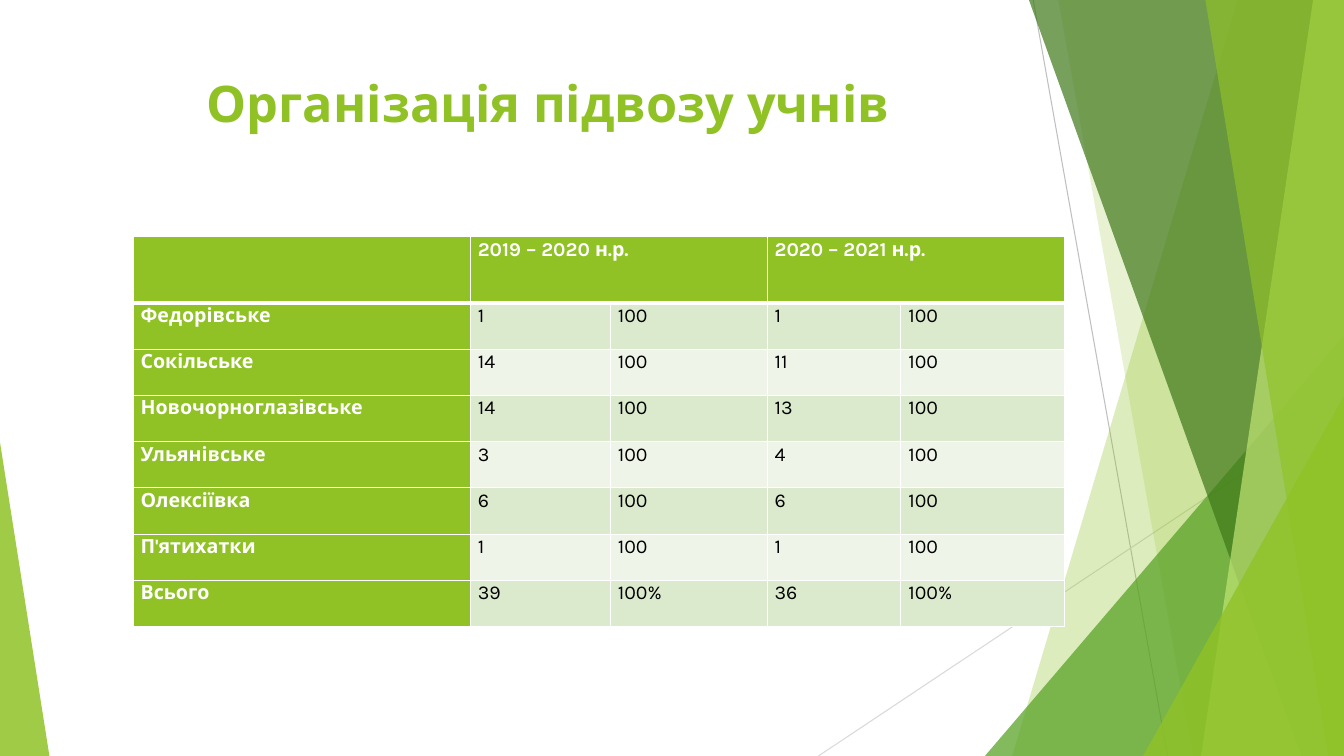
"""Build a slide with a table of pupil transport by village and school year."""
from lxml import etree
from pptx import Presentation
from pptx.dml.color import RGBColor
from pptx.enum.shapes import MSO_CONNECTOR, MSO_SHAPE
from pptx.enum.text import MSO_ANCHOR, PP_ALIGN
from pptx.oxml.ns import qn
from pptx.util import Pt

STRAIGHT = MSO_CONNECTOR.STRAIGHT
TRIANGLE = MSO_SHAPE.ISOSCELES_TRIANGLE
TOP = MSO_ANCHOR.TOP
CENTER = PP_ALIGN.CENTER

WHITE = RGBColor(0xFF, 0xFF, 0xFF)
BLACK = RGBColor(0, 0, 0)
LIME = RGBColor(0x90, 0xC2, 0x26)
PALE_LIME = RGBColor(0xC0, 0xE4, 0x74)
GREEN = RGBColor(0x54, 0xA0, 0x21)
DARK_GREEN = RGBColor(0x3F, 0x78, 0x19)
ODD_ROW = RGBColor(0xDB, 0xE9, 0xCD)
EVEN_ROW = RGBColor(0xEE, 0xF4, 0xE8)
GRAY = RGBColor(0xBF, 0xBF, 0xBF)
LIGHT_GRAY = RGBColor(0xD9, 0xD9, 0xD9)

FONT = "Karla"
WIDTH, HEIGHT = 960, 540
TITLE = "Організація підвозу учнів"
ROWS = [
    ("", "2019 – 2020 н.р.", "", "2020 – 2021 н.р.", ""),
    ("Федорівське", "1", "100", "1", "100"),
    ("Сокільське", "14", "100", "11", "100"),
    ("Новочорноглазівське", "14", "100", "13", "100"),
    ("Ульянівське", "3", "100", "4", "100"),
    ("Олексіївка", "6", "100", "6", "100"),
    ("П'ятихатки", "1", "100", "1", "100"),
    ("Всього", "39", "100%", "36", "100%"),
]
COLUMN_WIDTHS = (241, 100, 112, 95.5, 117)
HEADER_HEIGHT, ROW_HEIGHT = 47.2, 33.05
TABLE_LEFT, TABLE_TOP = 95, 169.2

LINES = [
    ((738, 0), (834, HEIGHT), GRAY),
    ((WIDTH, 290), (584.6, HEIGHT), LIGHT_GRAY),
]
# Each band runs from its slanted left edge to the right side of the slide.
BANDS_BACK = [(884, 723, LIME, 30), (756, 852, LIME, 20)]
BANDS_FRONT = [
    (735, 929.5, DARK_GREEN, 70),
    (938, 858, PALE_LIME, 70),
    (861, 949, LIME, 65),
]
CORNER_BACK = (703.5, 240, WIDTH, 1, GREEN, 72)
CORNERS_FRONT = [(816.5, 283, WIDTH, 1, LIME, 80), (0, 316, 35.3, 0, LIME, 85)]


def paint(shape, color, opacity):
    shape.shadow.inherit = False
    shape.line.fill.background()
    shape.fill.solid()
    shape.fill.fore_color.rgb = color
    color_element = shape._element.spPr.find(".//" + qn("a:srgbClr"))
    etree.SubElement(color_element, qn("a:alpha"), val=str(opacity * 1000))


def add_line(slide, start, end, color):
    points = [Pt(value) for value in start + end]
    connector = slide.shapes.add_connector(STRAIGHT, *points)
    connector.line.color.rgb = color
    connector.line.width = Pt(0.75)
    etree.SubElement(connector._element.spPr, qn("a:effectLst"))


def add_band(slide, top_x, bottom_x, color, opacity):
    builder = slide.shapes.build_freeform(Pt(top_x), 0)
    corners = [(WIDTH, 0), (WIDTH, HEIGHT), (bottom_x, HEIGHT)]
    builder.add_line_segments([(Pt(x), Pt(y)) for x, y in corners], close=True)
    paint(builder.convert_to_shape(), color, opacity)


def add_corner(slide, left, top, right, apex, color, opacity):
    shape = slide.shapes.add_shape(
        TRIANGLE, Pt(left), Pt(top), Pt(right - left), Pt(HEIGHT - top))
    shape.adjustments[0] = apex
    paint(shape, color, opacity)


def add_title(slide):
    box = slide.shapes.add_textbox(Pt(53.3), Pt(48), Pt(677), Pt(104))
    frame = box.text_frame
    frame.word_wrap = True
    frame.vertical_anchor = TOP
    paragraph = frame.paragraphs[0]
    paragraph.text = TITLE
    paragraph.alignment = CENTER
    set_font(paragraph.font, 36, LIME, True)


def set_font(font, size, color, bold):
    font.name = FONT
    font.size = Pt(size)
    font.color.rgb = color
    font.bold = bold


def set_borders(cell, top, bottom):
    properties = cell._tc.get_or_add_tcPr()
    widths = {"a:lnL": 1, "a:lnR": 1, "a:lnT": top, "a:lnB": bottom}
    for index, (tag, width) in enumerate(widths.items()):
        line = etree.Element(qn(tag), w=str(Pt(width)))
        fill = etree.SubElement(line, qn("a:solidFill"))
        etree.SubElement(fill, qn("a:srgbClr"), val=str(WHITE))
        properties.insert(index, line)


def fill_cell(cell, text, row, column):
    heading = row == 0 or column == 0
    cell.margin_left = cell.margin_right = Pt(5.4)
    cell.margin_top = cell.margin_bottom = 0
    cell.fill.solid()
    cell.fill.fore_color.rgb = LIME if heading else ODD_ROW if row % 2 else EVEN_ROW
    set_borders(cell, 3 if row == 1 else 1, 3 if row == 0 else 1)
    paragraph = cell.text_frame.paragraphs[0]
    paragraph.text = text
    paragraph.line_spacing = 1.07
    set_font(paragraph.font, 14, WHITE if heading else BLACK, heading)


def add_transport_table(slide):
    heights = [HEADER_HEIGHT] + [ROW_HEIGHT] * (len(ROWS) - 1)
    table = slide.shapes.add_table(
        len(ROWS), len(COLUMN_WIDTHS), Pt(TABLE_LEFT), Pt(TABLE_TOP),
        Pt(sum(COLUMN_WIDTHS)), Pt(sum(heights))).table
    for column, width in zip(table.columns, COLUMN_WIDTHS):
        column.width = Pt(width)
    for row, height in zip(table.rows, heights):
        row.height = Pt(height)
    for row, texts in enumerate(ROWS):
        for column, text in enumerate(texts):
            fill_cell(table.cell(row, column), text, row, column)
    for column in (1, 3):
        table.cell(0, column).merge(table.cell(0, column + 1))


def main():
    presentation = Presentation()
    presentation.slide_width, presentation.slide_height = Pt(WIDTH), Pt(HEIGHT)
    slide = presentation.slides.add_slide(presentation.slide_layouts[6])
    for line in LINES:
        add_line(slide, *line)
    for band in BANDS_BACK:
        add_band(slide, *band)
    add_corner(slide, *CORNER_BACK)
    for band in BANDS_FRONT:
        add_band(slide, *band)
    for corner in CORNERS_FRONT:
        add_corner(slide, *corner)
    add_title(slide)
    add_transport_table(slide)
    presentation.save("out.pptx")


if __name__ == "__main__":
    main()
